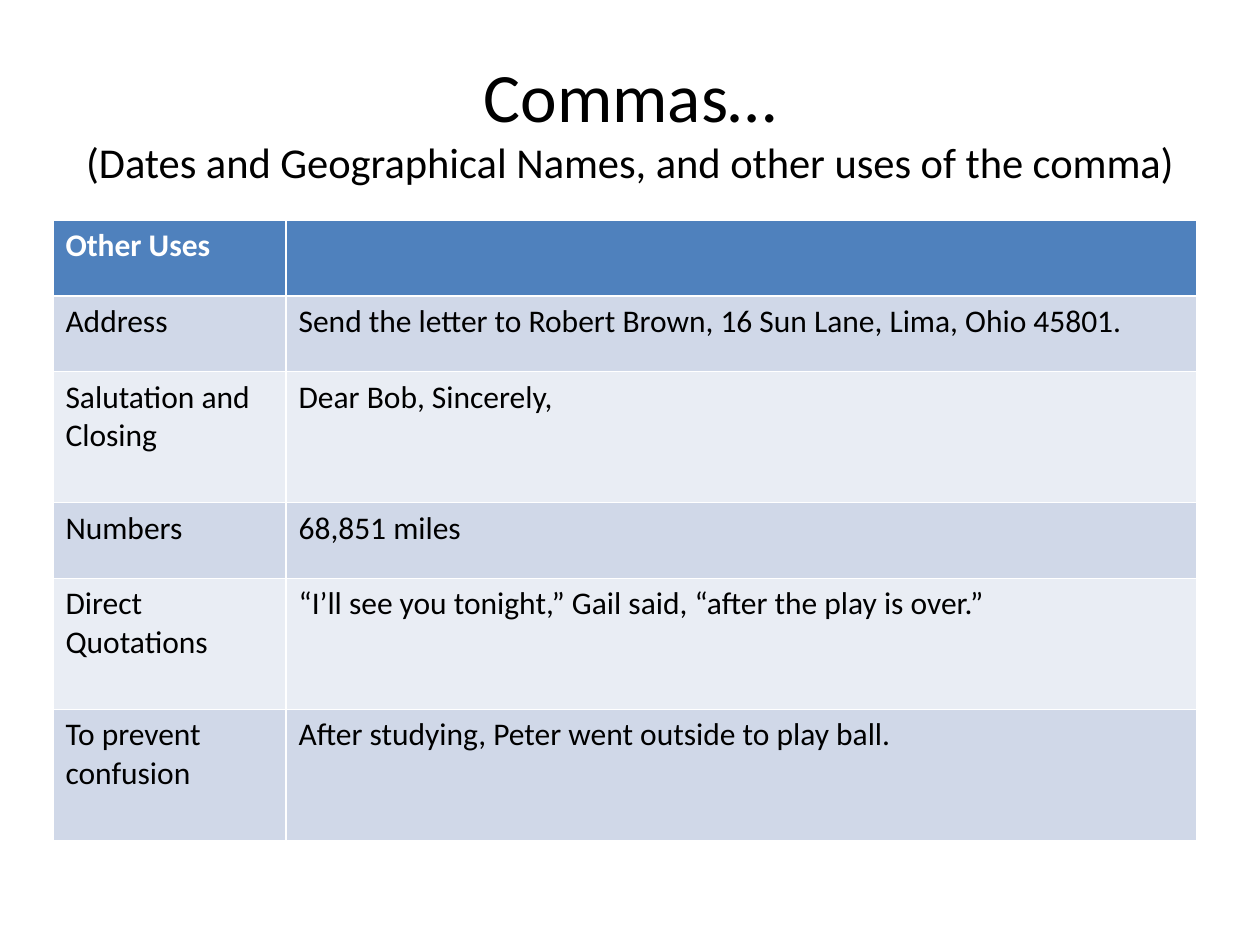
"""Build a slide with a table of further uses of the comma."""
from dataclasses import dataclass

from pptx import Presentation
from pptx.dml.color import RGBColor
from pptx.enum.text import MSO_ANCHOR, MSO_AUTO_SIZE, PP_ALIGN
from pptx.util import Inches, Pt

MIDDLE = MSO_ANCHOR.MIDDLE
NO_AUTOFIT = MSO_AUTO_SIZE.NONE
CENTER = PP_ALIGN.CENTER
TITLE_ONLY = 5


@dataclass(frozen=True)
class Theme:
    font: str = "Calibri"
    title_size: float = 39.6
    subtitle_size: float = 24.3
    cell_size: float = 18
    text: RGBColor = RGBColor(0, 0, 0)
    header_text: RGBColor = RGBColor(255, 255, 255)
    header_fill: RGBColor = RGBColor.from_string("4F81BD")
    bands: tuple = (RGBColor.from_string("E9EDF4"), RGBColor.from_string("D0D8E8"))


theme = Theme()
comma_uses = [
    ("Other Uses", ""),
    ("Address", "Send the letter to Robert Brown, 16 Sun Lane, Lima, Ohio 45801."),
    ("Salutation and Closing", "Dear Bob, Sincerely,"),
    ("Numbers", "68,851 miles"),
    ("Direct Quotations", "“I’ll see you tonight,” Gail said, “after the play is over.”"),
    ("To prevent confusion", "After studying, Peter went outside to play ball."),
]
column_widths = [1.85, 7.23]
row_heights = [0.6, 0.6, 1.04, 0.6, 1.04, 1.04]

prs = Presentation()
prs.slide_width, prs.slide_height = Inches(10), Inches(7.5)
slide = prs.slides.add_slide(prs.slide_layouts[TITLE_ONLY])

title = slide.shapes.title
title.left, title.top = Inches(0.5), Inches(0.33)
title.width, title.height = Inches(9), Inches(1.25)
title.text_frame.auto_size = NO_AUTOFIT
title.text_frame.vertical_anchor = MIDDLE
heading = title.text_frame.paragraphs[0]
heading.text = "Commas…\v(Dates and Geographical Names, and other uses of the comma)"
heading.alignment = CENTER
heading.font.name = theme.font
heading.font.color.rgb = theme.text
for line, size in zip(heading.runs, (theme.title_size, theme.subtitle_size)):
    line.font.size = Pt(size)

uses_table = slide.shapes.add_table(
    len(comma_uses), len(column_widths), Inches(0.42), Inches(1.75),
    Inches(sum(column_widths)), Inches(sum(row_heights)),
).table
for column, width in zip(uses_table.columns, column_widths):
    column.width = Inches(width)
for row, height in zip(uses_table.rows, row_heights):
    row.height = Inches(height)

for r, use in enumerate(comma_uses):
    is_header = r == 0
    for c, wording in enumerate(use):
        cell = uses_table.cell(r, c)
        cell.fill.solid()
        cell.fill.fore_color.rgb = theme.header_fill if is_header else theme.bands[r % 2]
        cell.text = wording
        font = cell.text_frame.paragraphs[0].font
        font.name = theme.font
        font.size = Pt(theme.cell_size)
        font.bold = is_header
        font.color.rgb = theme.header_text if is_header else theme.text

prs.save("out.pptx")
